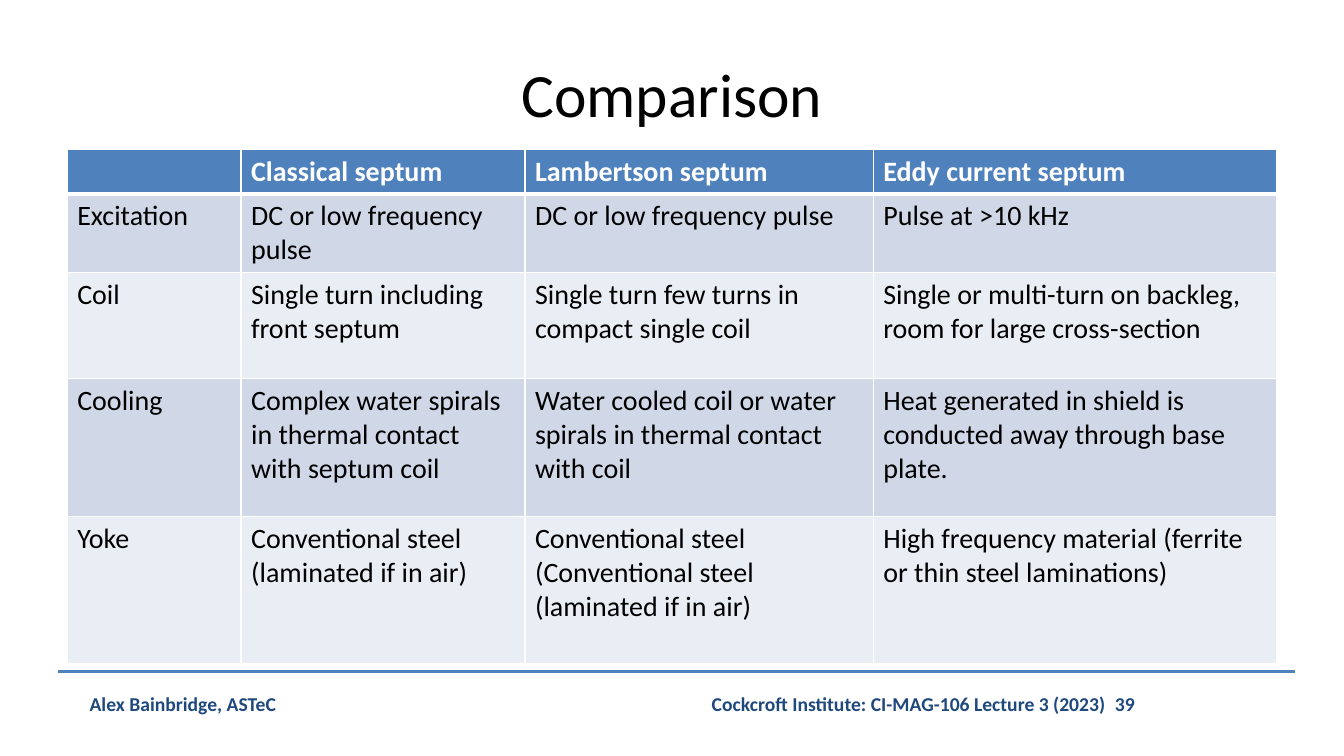
from lxml import etree
from pptx import Presentation
from pptx.dml.color import RGBColor
from pptx.enum.text import MSO_ANCHOR as Anchor, MSO_AUTO_SIZE as AutoSize, PP_ALIGN as Align
from pptx.oxml.ns import qn
from pptx.util import Pt

COLORS = {"header": "4F81BD", "odd": "D0D8E8", "even": "E9EDF4",
          "white": "FFFFFF", "black": "000000", "footer": "1F497D"}


def write(tf, text, size, color, bold=False, align=Align.LEFT):
    p = tf.paragraphs[0]
    p.alignment = align
    r = p.add_run()
    r.text = text
    for name, value in {"name": "Calibri", "size": Pt(size), "bold": bold}.items():
        setattr(r.font, name, value)
    r.font.color.rgb = RGBColor.from_string(COLORS[color])


def add_border(cell, side, width):
    ln = etree.SubElement(cell._tc.get_or_add_tcPr(), qn(f"a:ln{side}"), w=str(Pt(width)))
    fill = etree.SubElement(ln, qn("a:solidFill"))
    etree.SubElement(fill, qn("a:srgbClr"), val=COLORS["white"])


prs = Presentation()
prs.slide_width, prs.slide_height = Pt(960), Pt(540)
s = prs.slides.add_slide(prs.slide_layouts[5])

title = s.shapes.title
title_format = {"left": Pt(48), "top": Pt(21.6), "width": Pt(864), "height": Pt(90)}
for name, value in title_format.items():
    setattr(title, name, value)
title.text_frame.vertical_anchor = Anchor.MIDDLE
write(title.text_frame, "Comparison", 44, "black", align=Align.CENTER)

rows = [
    ["", "Classical septum", "Lambertson septum", "Eddy current septum"],
    ["Excitation", "DC or low frequency pulse", "DC or low frequency pulse",
     "Pulse at >10 kHz"],
    ["Coil", "Single turn including front septum",
     "Single turn few turns in compact single coil",
     "Single or multi-turn on backleg, room for large cross-section"],
    ["Cooling", "Complex water spirals in thermal contact with septum coil",
     "Water cooled coil or water spirals in thermal contact with coil",
     "Heat generated in shield is conducted away through base plate."],
    ["Yoke", "Conventional steel (laminated if in air)",
     "Conventional steel (Conventional steel (laminated if in air)",
     "High frequency material (ferrite or thin steel laminations)"],
]
col_widths = [124.2, 202.8, 248.8, 288]
row_heights = [30.6, 56, 75.6, 98.6, 105]

frame = s.shapes.add_table(len(rows), len(col_widths), Pt(48), Pt(106.8),
                           Pt(sum(col_widths)), Pt(sum(row_heights)))
table = frame.table
for col, width in zip(table.columns, col_widths):
    col.width = Pt(width)
for i, (texts, height) in enumerate(zip(rows, row_heights)):
    table.rows[i].height = Pt(height)
    is_header = i == 0
    fill = "header" if is_header else "odd" if i % 2 else "even"
    borders = {"L": 1, "R": 1, "T": 3 if i == 1 else 1, "B": 3 if is_header else 1}
    for j, text in enumerate(texts):
        cell = table.cell(i, j)
        for side, width in borders.items():
            add_border(cell, side, width)
        cell.fill.solid()
        cell.fill.fore_color.rgb = RGBColor.from_string(COLORS[fill])
        if text:
            write(cell.text_frame, text, 20, "white" if is_header else "black", is_header)

rule = s.shapes.add_connector(1, Pt(41.8), Pt(479.5), Pt(925.2), Pt(479.5))
rule.line.color.rgb = RGBColor.from_string(COLORS["header"])
rule.line.width = Pt(2)
etree.SubElement(rule._element.spPr, qn("a:effectLst"))

footers = [
    ("Alex Bainbridge, ASTeC", 56.9, 370, Align.LEFT),
    ("Cockcroft Institute: CI-MAG-106 Lecture 3 (2023)\t39", 393.8, 531.4, Align.CENTER),
]
for text, left, width, align in footers:
    tf = s.shapes.add_textbox(Pt(left), Pt(491), Pt(width), Pt(24.5)).text_frame
    tf.word_wrap = True
    tf.auto_size = AutoSize.SHAPE_TO_FIT_TEXT
    write(tf, text, 14, "footer", True, align)

prs.save("out.pptx")
